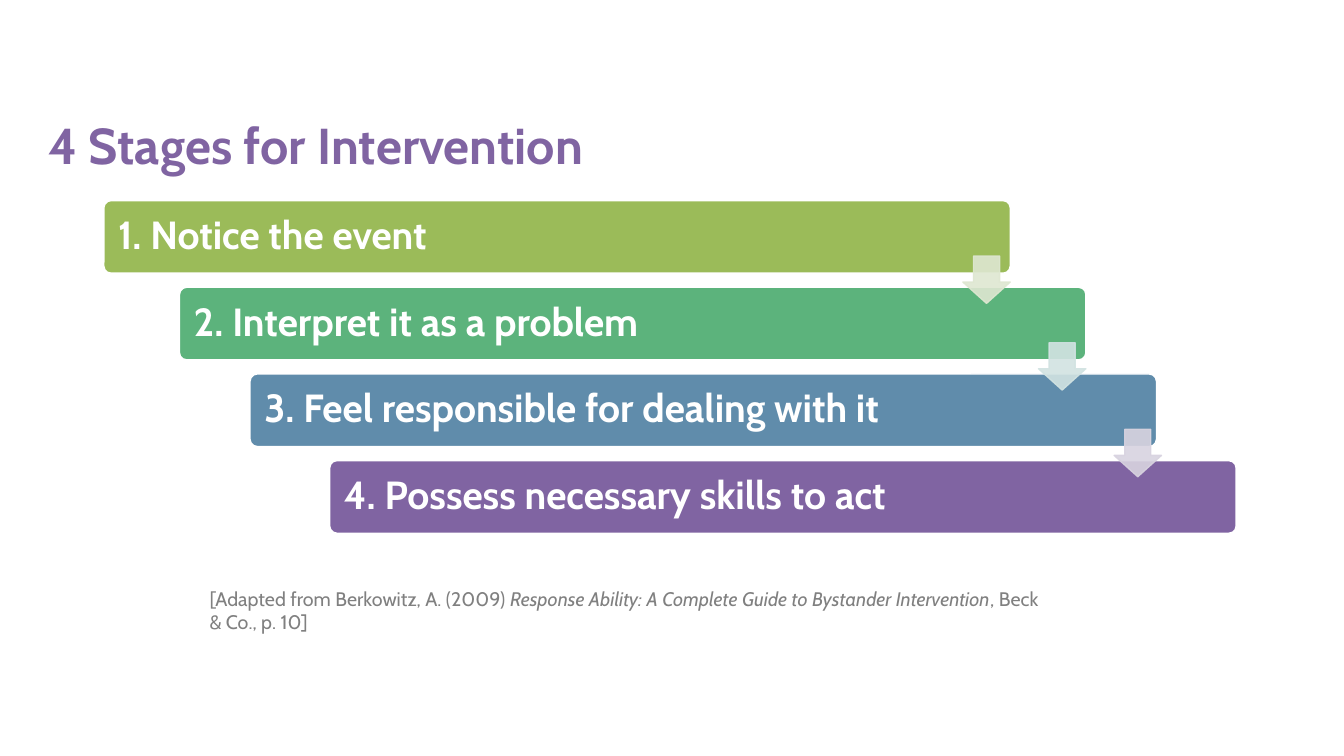
from pptx import Presentation
from pptx.dml.color import RGBColor
from pptx.enum.shapes import MSO_SHAPE
from pptx.enum.text import MSO_ANCHOR, MSO_AUTO_SIZE, PP_ALIGN
from pptx.oxml.ns import qn
from pptx.util import Inches, Pt
from lxml import etree

BAR, ARROW = MSO_SHAPE.ROUNDED_RECTANGLE, MSO_SHAPE.DOWN_ARROW
TOP, MIDDLE = MSO_ANCHOR.TOP, MSO_ANCHOR.MIDDLE
LEFT, NO_FIT = PP_ALIGN.LEFT, MSO_AUTO_SIZE.NONE

PURPLE, WHITE, GREY = "8064A2", "FFFFFF", "808080"
BAR_TOP, BAR_STEP = 1.99, 0.86
ARROW_LEFT, ARROW_STEP, ARROW_DROP = 9.55, 0.75, 0.55
STAGES = [
    ("1. Notice the event", 1.03, "9BBB59"),
    ("2. Interpret it as a problem", 1.78, "5CB37C"),
    ("3. Feel responsible for dealing with it", 2.48, "608CAB"),
    ("4. Possess necessary skills to act", 3.27, PURPLE),
]
ARROW_COLORS = ["DEE7D1", "D2E3E2", "D8D3E0"]
CITATION = [
    ("[Adapted from Berkowitz, A. (2009) ", False),
    ("Response Ability: A Complete Guide to Bystander Intervention", True),
    (", Beck & Co., p. 10]", False),
]


def rgb(color):
    return RGBColor.from_string(color)


class SlideBuilder:
    font = "Cabin"

    def __init__(self, prs):
        self.s = prs.slides.add_slide(prs.slide_layouts[5])

    def add_runs(self, tf, runs, size, color, bold=False, anchor=TOP):
        tf.word_wrap = True
        tf.auto_size = NO_FIT
        tf.vertical_anchor = anchor
        p = tf.paragraphs[0]
        p.alignment = LEFT
        for text, italic in runs:
            r = p.add_run()
            r.text = text
            r.font.name = self.font
            r.font.size = Pt(size)
            r.font.bold = bold
            r.font.italic = italic
            r.font.color.rgb = rgb(color)
        return p

    def title(self, text, x, y, w, h):
        sp = self.s.shapes.title
        sp.left, sp.top, sp.width, sp.height = map(Inches, (x, y, w, h))
        self.add_runs(sp.text_frame, [(text, False)], 36, PURPLE, True)

    def text(self, runs, x, y, w, h, size, color):
        sp = self.s.shapes.add_textbox(*map(Inches, (x, y, w, h)))
        self.add_runs(sp.text_frame, runs, size, color)

    def shape(self, kind, x, y, w, h, fill, line, adjustments):
        sp = self.s.shapes.add_shape(kind, *map(Inches, (x, y, w, h)))
        sp.shadow.inherit = False
        sp.fill.solid()
        sp.fill.fore_color.rgb = rgb(fill)
        sp.line.color.rgb = rgb(line)
        sp.line.width = Pt(1)
        for i, value in enumerate(adjustments):
            sp.adjustments[i] = value
        return sp

    def bar(self, text, x, y, fill):
        sp = self.shape(BAR, x, y, 8.99, 0.72, fill, WHITE, [0.1])
        tf = sp.text_frame
        tf.margin_left = tf.margin_right = Inches(0.12)
        p = self.add_runs(tf, [(text, False)], 28, WHITE, True, MIDDLE)
        p.line_spacing = 0.9

    def arrow(self, x, y, color):
        sp = self.shape(ARROW, x, y, 0.47, 0.47, color, color, [0.55, 0.45])
        for clr in sp._element.spPr.iter(qn("a:srgbClr")):
            etree.SubElement(clr, qn("a:alpha")).set("val", "90000")


def main():
    prs = Presentation()
    prs.slide_width, prs.slide_height = Inches(13.33), Inches(7.5)
    slide = SlideBuilder(prs)
    slide.title("4 Stages for Intervention", 0.38, 1.08, 7.14, 0.71)
    for i, (text, x, color) in enumerate(STAGES):
        slide.bar(text, x, BAR_TOP + i * BAR_STEP, color)
    for i, color in enumerate(ARROW_COLORS):
        y = BAR_TOP + ARROW_DROP + i * BAR_STEP
        slide.arrow(ARROW_LEFT + i * ARROW_STEP, y, color)
    slide.text(CITATION, 1.98, 5.77, 8.46, 0.57, 14, GREY)
    prs.save("out.pptx")


if __name__ == "__main__":
    main()
